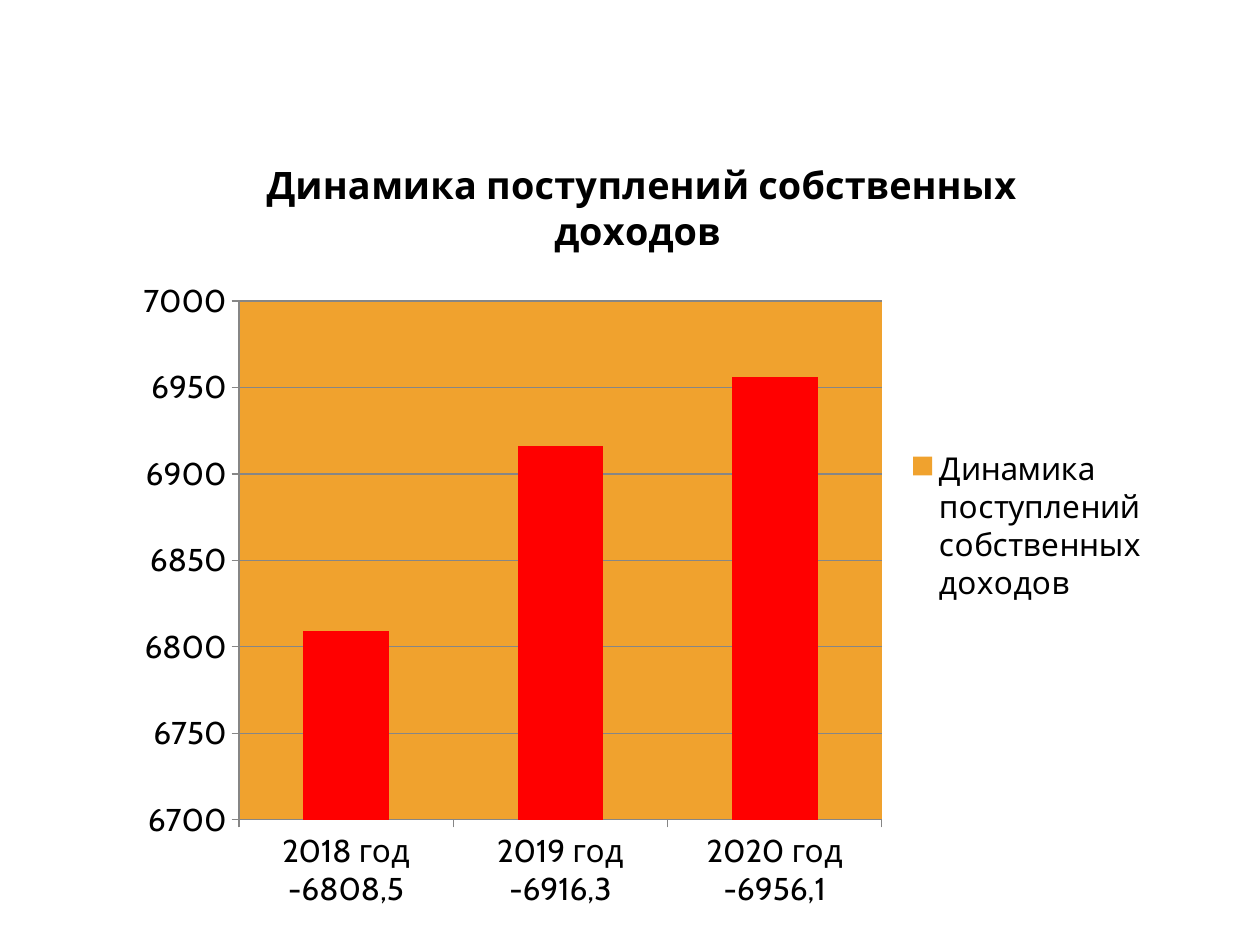
from lxml.etree import SubElement, fromstring
from pptx import Presentation
from pptx.chart.data import CategoryChartData
from pptx.dml.color import RGBColor
from pptx.enum.chart import XL_CHART_TYPE, XL_LEGEND_POSITION, XL_TICK_MARK
from pptx.oxml.ns import nsdecls, qn
from pptx.util import Emu, Pt

PX = 914400 // 126
COLORS = {"text": "000000", "plot": "F0A22E", "bar": "FF0000", "line": "868686"}
FONT = "Cabin"
TITLE = "Динамика поступлений собственных доходов "
INCOME = {
    "2018 год -6808,5": 6809,
    "2019 год -6916,3": 6916,
    "2020 год -6956,1": 6956,
}
CHART_BOX = (122, 129, 1040, 795)
PLOT_BOX = (117, 172, 643, 519)  # relative to the chart box


def px(n):
    return Emu(n * PX)


def color(name):
    return RGBColor.from_string(COLORS[name])


def set_font(font, **extra):
    values = {"name": FONT, "size": Pt(18), "bold": False, **extra}
    for key, value in values.items():
        setattr(font, key, value)
    font.color.rgb = color("text")


def fill(fmt, name):
    fmt.fill.solid()
    fmt.fill.fore_color.rgb = color(name)


def style_plot_area(chart, box, plot_box):
    """Fix the inner plot rectangle and give it a background."""
    area = chart.plots[0]._element.getparent()
    for old in area.findall(qn("c:layout")):
        area.remove(old)
    layout = fromstring(f"<c:layout {nsdecls('c')}/>")
    manual = SubElement(layout, qn("c:manualLayout"))
    x, y, w, h = plot_box
    values = {
        "layoutTarget": "inner", "xMode": "edge", "yMode": "edge",
        "x": x / box[2], "y": y / box[3], "w": w / box[2], "h": h / box[3],
    }
    for tag, value in values.items():
        SubElement(manual, qn(f"c:{tag}")).set("val", str(value))
    area.insert(0, layout)
    area.append(fromstring(
        f"<c:spPr {nsdecls('c', 'a')}><a:solidFill>"
        f'<a:srgbClr val="{COLORS["plot"]}"/></a:solidFill></c:spPr>'))


def style_axes(chart):
    for axis in (chart.category_axis, chart.value_axis):
        axis.major_tick_mark = XL_TICK_MARK.OUTSIDE
        axis.minor_tick_mark = XL_TICK_MARK.NONE
        axis.format.line.color.rgb = color("line")
        set_font(axis.tick_labels.font)
    axis = chart.value_axis
    scale = {"minimum_scale": 6700, "maximum_scale": 7000, "major_unit": 50,
             "has_major_gridlines": True}
    for key, value in scale.items():
        setattr(axis, key, value)
    axis.major_gridlines.format.line.color.rgb = color("line")


def add_income_chart(s, box):
    data = CategoryChartData(number_format="General")
    data.categories = list(INCOME)
    data.add_series(TITLE, list(INCOME.values()))
    chart = s.shapes.add_chart(
        XL_CHART_TYPE.COLUMN_STACKED, *map(px, box), data).chart
    set_font(chart.font)

    chart.has_title = True
    p = chart.chart_title.text_frame.paragraphs[0]
    r = p.add_run()
    r.text = TITLE
    set_font(r.font, size=Pt(21.6), bold=True)

    chart.has_legend = True
    chart.legend.position = XL_LEGEND_POSITION.RIGHT
    chart.legend.include_in_layout = False
    set_font(chart.legend.font)

    plot = chart.plots[0]
    for key, value in {"gap_width": 150, "overlap": 100,
                       "vary_by_categories": False}.items():
        setattr(plot, key, value)
    series = plot.series[0]
    series.invert_if_negative = False
    fill(series.format, "plot")
    for i in range(len(INCOME)):
        fill(series.points[i].format, "bar")

    style_axes(chart)
    style_plot_area(chart, box, PLOT_BOX)


def main():
    prs = Presentation()
    prs.slide_width, prs.slide_height = px(1260), px(945)
    s = prs.slides.add_slide(prs.slide_layouts[6])
    add_income_chart(s, CHART_BOX)
    prs.save("out.pptx")


if __name__ == "__main__":
    main()
